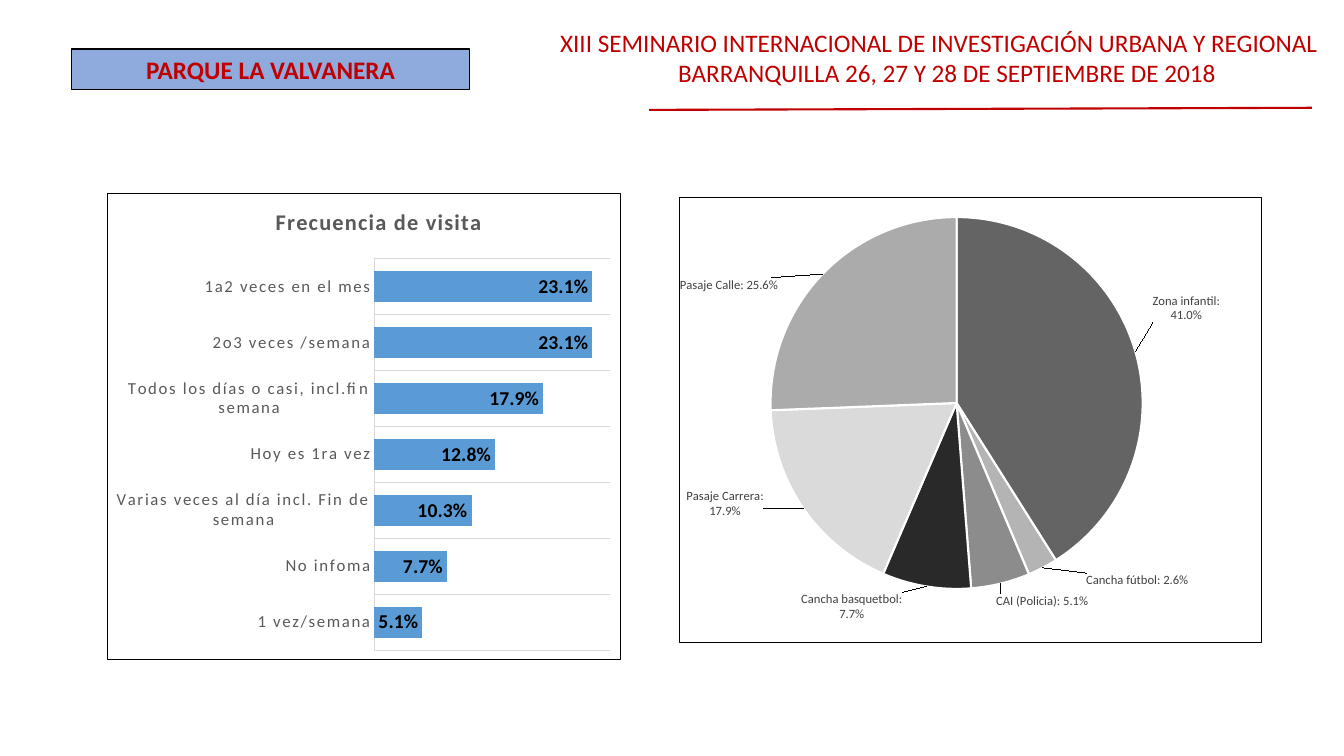
from copy import deepcopy

from lxml import etree
from pptx import Presentation
from pptx.chart.data import CategoryChartData
from pptx.dml.color import RGBColor
from pptx.enum.chart import XL_CHART_TYPE, XL_LABEL_POSITION, XL_TICK_MARK
from pptx.enum.shapes import MSO_CONNECTOR
from pptx.enum.text import MSO_ANCHOR, PP_ALIGN
from pptx.oxml import parse_xml
from pptx.oxml.ns import nsdecls, qn
from pptx.util import Pt

BAR_STACKED = XL_CHART_TYPE.BAR_STACKED
PIE = XL_CHART_TYPE.PIE
INSIDE_END = XL_LABEL_POSITION.INSIDE_END
OUTSIDE_END = XL_LABEL_POSITION.OUTSIDE_END
NO_TICK = XL_TICK_MARK.NONE
STRAIGHT = MSO_CONNECTOR.STRAIGHT
MIDDLE = MSO_ANCHOR.MIDDLE
CENTER = PP_ALIGN.CENTER

FONT = "Calibri"
RED, BLACK, WHITE = "C00000", "000000", "FFFFFF"
GRAY, GRID = "595959", "D9D9D9"

HEADER = [
    ("XIII SEMINARIO INTERNACIONAL DE INVESTIGACIÓN URBANA Y REGIONAL", None),
    ("BARRANQUILLA 26, 27 Y 28 DE SEPTIEMBRE DE 2018", CENTER),
]
VISITS = {
    "1 vez/semana": 0.051,
    "No infoma": 0.077,
    "Varias veces al día incl. Fin de semana": 0.103,
    "Hoy es 1ra vez": 0.128,
    "Todos los días o casi, incl.fin semana": 0.179,
    "2o3 veces /semana": 0.231,
    "1a2 veces en el mes": 0.231,
}
ZONES = [
    ("Zona infantil", 41.0, "646464", (0.02, -0.06)),
    ("Cancha fútbol", 2.6, "B4B4B4", (0.07, 0)),
    ("CAI (Policia)", 5.1, "8C8C8C", (-0.01, 0.01)),
    ("Cancha basquetbol", 7.7, "292929", (-0.04, 0)),
    ("Pasaje Carrera", 17.9, "DADADA", (-0.06, -0.05)),
    ("Pasaje Calle", 25.6, "ABABAB", (-0.08, 0.05)),
]


def color(value):
    return RGBColor.from_string(value)


def style_font(font, size, shade, bold=False):
    formats = {"name": FONT, "size": Pt(size), "bold": bold}
    for name, value in formats.items():
        setattr(font, name, value)
    font.color.rgb = color(shade)


def style_line(line, shade, width):
    line.color.rgb = color(shade)
    line.width = Pt(width)


def place(shape, box):
    for name, value in zip(("left", "top", "width", "height"), box):
        setattr(shape, name, Pt(value))


def layout_xml(**parts):
    items = "".join(f'<c:{name} val="{value}"/>' for name, value in parts.items())
    return parse_xml(
        f'<c:layout {nsdecls("c")}><c:manualLayout>{items}</c:manualLayout></c:layout>'
    )


def set_plot_box(chart, left, top, width, height):
    area = chart.element.find(f'{qn("c:chart")}/{qn("c:plotArea")}')
    for old in area.findall(qn("c:layout")):
        area.remove(old)
    area.insert(0, layout_xml(layoutTarget="inner", xMode="edge", yMode="edge",
                              x=left, y=top, w=width, h=height))


def add_framed_chart(page, kind, box, categories, values, number_format):
    chart_data = CategoryChartData(number_format=number_format)
    chart_data.categories = categories
    chart_data.add_series("Series 1", values)
    chart = page.shapes.add_chart(kind, *map(Pt, box), chart_data).chart
    chart.has_legend = False
    chart.has_title = False
    style_font(chart.font, 10, BLACK)
    frame = parse_xml(
        f'<c:spPr {nsdecls("c", "a")}><a:solidFill><a:srgbClr val="{WHITE}"/></a:solidFill>'
        f'<a:ln w="{Pt(0.75)}"><a:solidFill><a:srgbClr val="{BLACK}"/></a:solidFill></a:ln></c:spPr>'
    )
    chart.element.find(qn("c:chart")).addnext(frame)
    return chart


def add_park_title(page, box):
    title = page.shapes.title
    place(title, box)
    title.fill.solid()
    title.fill.fore_color.rgb = color("8FAADC")
    style_line(title.line, BLACK, 0.75)
    title.text_frame.vertical_anchor = MIDDLE
    para = title.text_frame.paragraphs[0]
    para.alignment = CENTER
    span = para.add_run()
    span.text = "PARQUE LA VALVANERA"
    style_font(span.font, 18, RED, True)


def add_seminar_header(page, box):
    left, top, width, height = box
    frame = page.shapes.add_textbox(*map(Pt, box)).text_frame
    frame.word_wrap = True
    for index, (text, alignment) in enumerate(HEADER):
        para = frame.add_paragraph() if index else frame.paragraphs[0]
        para.alignment = alignment
        span = para.add_run()
        span.text = text
        style_font(span.font, 18, RED)
    rule = page.shapes.add_connector(
        STRAIGHT, Pt(left + 70.7), Pt(top + height + 11.5),
        Pt(left + width - 23), Pt(top + height + 10))
    style_line(rule.line, RED, 1.5)
    etree.SubElement(rule.element.spPr, qn("a:effectLst"))


def add_visit_chart(page, box):
    chart = add_framed_chart(page, BAR_STACKED, box, VISITS.keys(), VISITS.values(), "0.0%")
    chart.has_title = True
    para = chart.chart_title.text_frame.paragraphs[0]
    span = para.add_run()
    span.text = "Frecuencia de visita"
    style_font(span.font, 16, GRAY, True)
    span.font._element.set("spc", "100")
    title = chart.chart_title.element
    for old in title.findall(qn("c:layout")):
        title.remove(old)
    title.find(qn("c:tx")).addnext(layout_xml(xMode="edge", yMode="edge", x=0.32, y=0.02))
    set_plot_box(chart, 0.52, 0.14, 0.46, 0.84)

    values = chart.value_axis
    values.minimum_scale, values.maximum_scale = 0, 0.25
    values.has_major_gridlines = False
    values.visible = False
    names = chart.category_axis
    names.major_tick_mark = names.minor_tick_mark = NO_TICK
    names.has_major_gridlines = True
    for line in (names.format.line, names.major_gridlines.format.line):
        style_line(line, GRID, 0.75)
    style_font(names.tick_labels.font, 12, GRAY)
    for props in names._element.iter(qn("a:defRPr")):
        props.set("spc", "120")

    plot = chart.plots[0]
    plot.gap_width, plot.overlap = 79, 100
    plot.vary_by_categories = False
    bars = plot.series[0]
    bars.format.fill.solid()
    bars.format.fill.fore_color.rgb = color("5B9BD5")
    formats = {"show_value": True, "number_format": "0.0%",
               "number_format_is_linked": False, "position": INSIDE_END}
    for name, value in formats.items():
        setattr(bars.data_labels, name, value)
    style_font(bars.data_labels.font, 14, BLACK, True)


def add_zone_chart(page, box):
    names, values, shades, shifts = zip(*ZONES)
    chart = add_framed_chart(page, PIE, box, names, values, "0.0")
    set_plot_box(chart, 0.156, 0.043, 0.64, 0.838)
    slices = chart.plots[0].series[0]
    for index, shade in enumerate(shades):
        style = slices.points[index].format
        style.fill.solid()
        style.fill.fore_color.rgb = color(shade)
        style_line(style.line, WHITE, 1.5)

    labels = slices.data_labels
    formats = {"show_value": True, "show_category_name": True, "number_format": '0.0"%"',
               "number_format_is_linked": False, "position": OUTSIDE_END}
    for name, value in formats.items():
        setattr(labels, name, value)
    style_font(labels.font, 9, "404040")
    group = labels._element
    separator = parse_xml(f'<c:separator {nsdecls("c")}>: </c:separator>')
    group.find(qn("c:showBubbleSize")).addnext(separator)
    shared = [part for part in group if part.tag != qn("c:showLeaderLines")]
    for index, (across, down) in enumerate(shifts):
        label = parse_xml(f'<c:dLbl {nsdecls("c")}><c:idx val="{index}"/></c:dLbl>')
        label.append(layout_xml(x=across, y=down))
        label.extend(deepcopy(part) for part in shared)
        group.insert(index, label)


def main():
    deck = Presentation()
    deck.slide_width, deck.slide_height = Pt(960), Pt(540)
    page = deck.slides.add_slide(deck.slide_layouts[5])
    add_seminar_header(page, (393, 16, 567, 51))
    add_park_title(page, (51, 35, 284.5, 29))
    add_visit_chart(page, (76.3, 137.5, 367.5, 334))
    add_zone_chart(page, (485.3, 140.5, 416, 319))
    deck.save("out.pptx")


if __name__ == "__main__":
    main()
